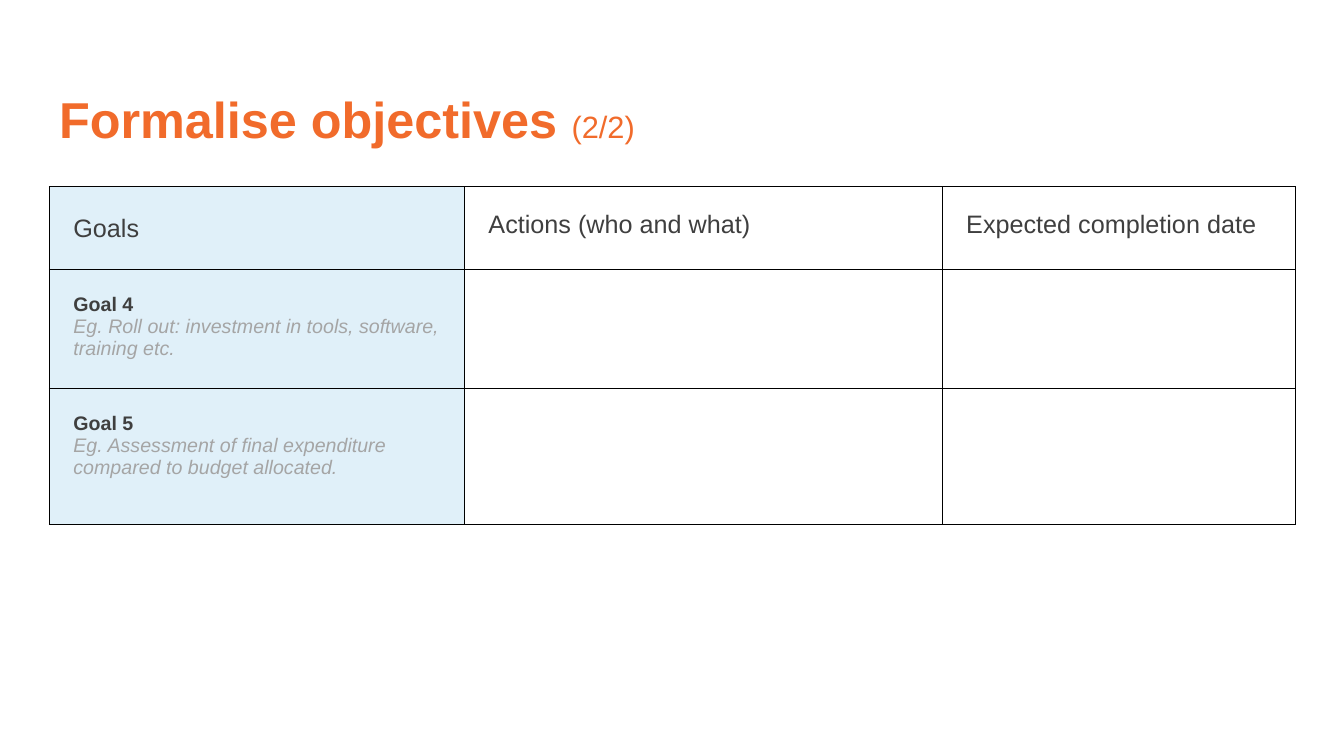
import pptx
import pptx.util
import pptx.dml.color
import pptx.enum.text
import pptx.oxml
import pptx.oxml.ns
from dataclasses import dataclass

Cm = pptx.util.Cm
Pt = pptx.util.Pt


@dataclass(frozen=True)
class Theme:
    font: str = "Arial"
    accent: str = "F16B2B"
    ink: str = "3F3F3F"
    hint: str = "A5A5A5"
    tint: str = "E0F0F9"
    paper: str = "FFFFFF"
    rule: str = "000000"
    title: int = 36
    count: int = 22
    head: int = 18
    body: int = 14
    line: float = 0.75


class Deck:
    def __init__(self, theme):
        self.theme = theme
        self.file = pptx.Presentation()
        self.file.slide_width = Cm(33.87)
        self.file.slide_height = Cm(19.05)
        self.slide = self.file.slides.add_slide(self.file.slide_layouts[6])

    def style(self, run, size, color, bold=False, italic=False):
        font = run.font
        font.name = self.theme.font
        font.size = Pt(size)
        font.bold = bold
        font.italic = italic
        font.color.rgb = pptx.dml.color.RGBColor.from_string(color)

    def title(self, text, count, left, top, width, height):
        box = self.slide.shapes.add_textbox(Cm(left), Cm(top), Cm(width), Cm(height))
        frame = box.text_frame
        frame.word_wrap = True
        frame.vertical_anchor = pptx.enum.text.MSO_ANCHOR.MIDDLE
        para = frame.paragraphs[0]
        para.text = text
        para.line_spacing = 0.9
        self.style(para.runs[0], self.theme.title, self.theme.accent, bold=True)
        part = para.add_run()
        part.text = count
        self.style(part, self.theme.count, self.theme.accent)

    def table(self, left, top, widths, heights):
        frame = self.slide.shapes.add_table(
            len(heights), len(widths), Cm(left), Cm(top),
            Cm(sum(widths)), Cm(sum(heights)))
        grid = frame.table
        for col, width in zip(grid.columns, widths):
            col.width = Cm(width)
        for row, height in zip(grid.rows, heights):
            row.height = Cm(height)
        return grid

    def border(self, cell):
        props = cell._tc.get_or_add_tcPr()
        for side in ("lnL", "lnR", "lnT", "lnB"):
            props.append(pptx.oxml.parse_xml(
                f'<a:{side} {pptx.oxml.ns.nsdecls("a")} w="{Pt(self.theme.line)}">'
                f'<a:solidFill><a:srgbClr val="{self.theme.rule}"/></a:solidFill>'
                f'</a:{side}>'))

    def cell(self, cell, fill, lines, space=1.0):
        """Fill one cell; each line is (text, size, color, bold, italic)."""
        self.border(cell)
        cell.fill.solid()
        cell.fill.fore_color.rgb = pptx.dml.color.RGBColor.from_string(fill)
        cell.margin_left = cell.margin_right = Cm(0.61)
        cell.margin_top = cell.margin_bottom = Cm(0.61)
        cell.text_frame.text = "\n".join(line[0] for line in lines)
        for para, line in zip(cell.text_frame.paragraphs, lines):
            para.line_spacing = space
            for run in para.runs:
                self.style(run, *line[1:])


def main():
    theme = Theme()
    deck = Deck(theme)

    # Heading
    deck.title("Formalise objectives ", "(2/2)", 1.24, 1.24, 29.21, 3.68)

    # Goals table: header row, then one row for each goal
    heads = ["Goals", "Actions (who and what)", "Expected completion date"]
    goals = [
        ("Goal 4", "Eg. Roll out: investment in tools, software, training etc."),
        ("Goal 5", "Eg. Assessment of final expenditure compared to budget allocated."),
    ]
    rows = [[[(head, theme.head, theme.ink)] for head in heads]]
    for name, hint in goals:
        goal = [(name, theme.body, theme.ink, True),
                (hint, theme.body, theme.hint, False, True)]
        rows.append([goal, [], []])

    grid = deck.table(1.24, 4.7, [10.46, 12.04, 8.9], [2.02, 2.87, 3.41])
    for r, row in enumerate(rows):
        for c, lines in enumerate(row):
            fill = theme.paper if c else theme.tint
            space = 1.15 if r == c == 0 else 1.0
            deck.cell(grid.cell(r, c), fill, lines, space)

    deck.file.save("out.pptx")


if __name__ == "__main__":
    main()
